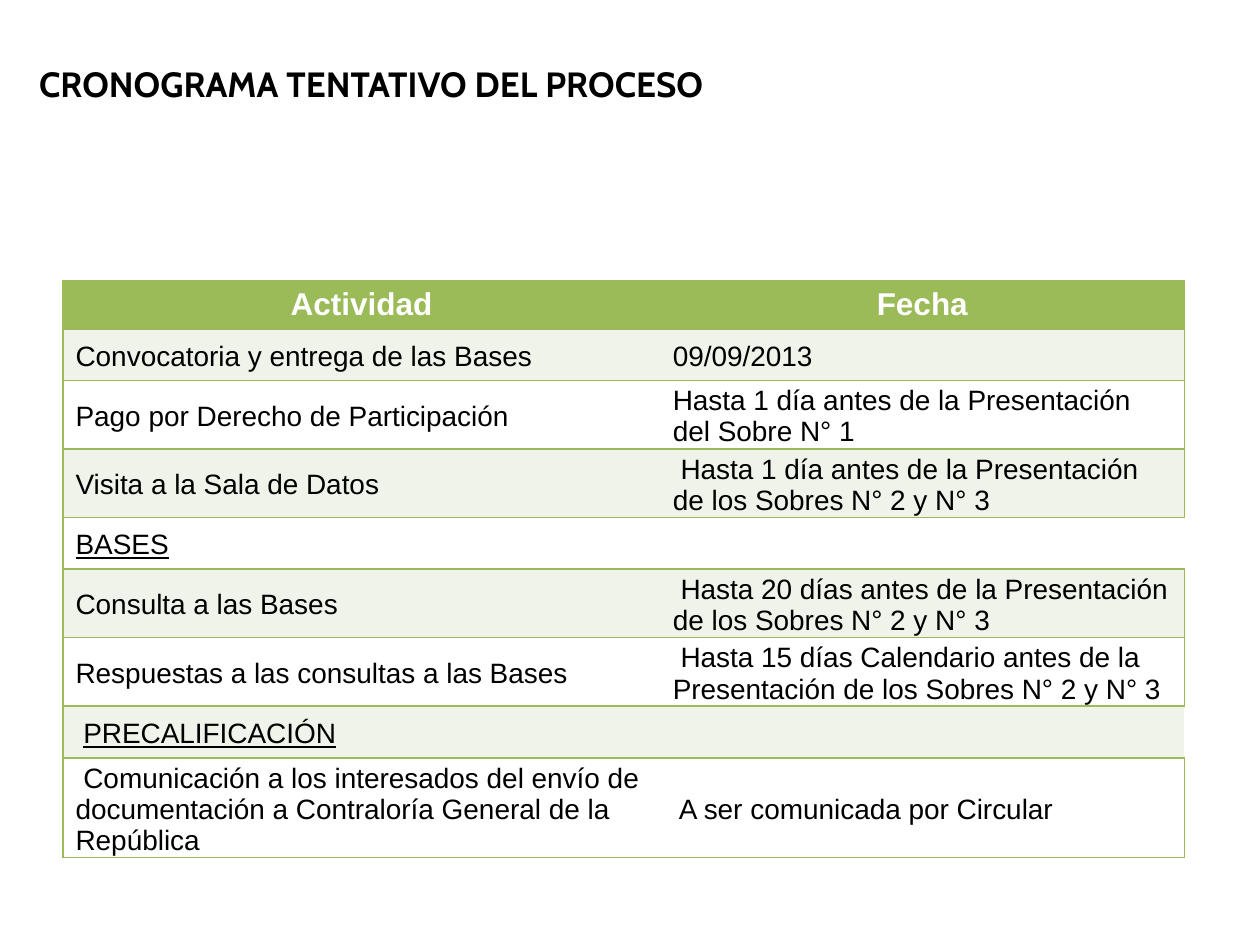
from dataclasses import dataclass

from lxml.etree import SubElement
from pptx import Presentation
from pptx.dml.color import RGBColor
from pptx.enum.text import MSO_ANCHOR, PP_ALIGN
from pptx.oxml.ns import qn
from pptx.table import Table, _Cell
from pptx.text.text import TextFrame
from pptx.util import Inches, Pt

GREEN, PALE, WHITE, BLACK = "9BBB59", "EFF3EA", "FFFFFF", "000000"
COLUMN_WIDTHS = (4.74, 4.16)
HEADER_HEIGHT, ROW_HEIGHT = 0.31, 0.41
CELL_MARGINS = {"margin_left": 0.1, "margin_right": 0.1, "margin_top": 0.04, "margin_bottom": 0.01}

TITLE_FONT = {"name": "Cabin", "size": Pt(20), "bold": True}
HEADER_FONT = {"name": "Arial", "size": Pt(18), "bold": True}
BODY_FONT = {"name": "Arial", "size": Pt(16), "bold": False}
SECTION_FONT = BODY_FONT | {"underline": True}


@dataclass(frozen=True)
class Step:
    """One row of the schedule; without a date it is a section heading."""
    activity: str
    date: str = ""


# Non-breaking spaces indent some entries and join numbers to words.
STEPS = (
    Step("Convocatoria y entrega de las Bases", "09/09/2013"),
    Step("Pago por Derecho de Participación",
         "Hasta 1 día antes de la Presentación del Sobre N° 1"),
    Step("Visita a la Sala de Datos",
         " Hasta 1 día antes de la Presentación de los Sobres N° 2 y N° 3"),
    Step("BASES"),
    Step("Consulta a las Bases",
         " Hasta 20 días antes de la Presentación de los Sobres N° 2 y N° 3"),
    Step("Respuestas a las consultas a las Bases",
         " Hasta 15 días Calendario antes de la Presentación de los Sobres N° 2 y N° 3"),
    Step(" PRECALIFICACIÓN"),
    Step(" Comunicación a los interesados del envío de documentación "
         "a Contraloría General de la República",
         " A ser comunicada por Circular"),
)


def rgb(color: str) -> RGBColor:
    return RGBColor.from_string(color)


def write(frame: TextFrame, text: str, font: dict, color: str, align: PP_ALIGN) -> None:
    """Write one paragraph, leaving any leading indent out of the underline."""
    paragraph = frame.paragraphs[0]
    paragraph.alignment = align
    words = text.lstrip()
    indent = text[:len(text) - len(words)]
    parts = ((indent, font | {"underline": False}), (words, font))
    for part, values in parts:
        if part:
            run = paragraph.add_run()
            run.text = part
            for attribute, value in values.items():
                setattr(run.font, attribute, value)
            run.font.color.rgb = rgb(color)


def draw_borders(cell: _Cell, open_edge: str) -> None:
    """Line every edge but the open one; lines must come before the fill."""
    properties = cell._tc.get_or_add_tcPr()
    for index, edge in enumerate("LRTB"):
        line = SubElement(properties, qn(f"a:ln{edge}"), w=str(Pt(1)))
        properties.insert(index, line)
        if edge == open_edge:
            SubElement(line, qn("a:noFill"))
        else:
            SubElement(SubElement(line, qn("a:solidFill")), qn("a:srgbClr"), val=GREEN)


def fill_row(table: Table, row: int, step: Step, fill: str, font: dict,
             color: str, align: PP_ALIGN) -> None:
    cells = table.cell(row, 0), table.cell(row, 1)
    for cell, text, open_edge in zip(cells, (step.activity, step.date), "RL"):
        cell.fill.solid()
        cell.fill.fore_color.rgb = rgb(fill)
        cell.vertical_anchor = MSO_ANCHOR.MIDDLE
        draw_borders(cell, open_edge)
        write(cell.text_frame, text, font, color, align)
        if row:
            for margin, inches in CELL_MARGINS.items():
                setattr(cell, margin, Inches(inches))
    if not step.date:
        cells[0].merge(cells[1])


def main() -> None:
    deck = Presentation()
    deck.slide_width, deck.slide_height = Inches(10), Inches(7.5)
    slide = deck.slides.add_slide(deck.slide_layouts[5])

    title = slide.shapes.title
    title_box = {"left": 0.21, "top": 0.04, "width": 7.48, "height": 1.25}
    for attribute, inches in title_box.items():
        setattr(title, attribute, Inches(inches))
    title.text_frame.vertical_anchor = MSO_ANCHOR.MIDDLE
    write(title.text_frame, "CRONOGRAMA TENTATIVO DEL PROCESO", TITLE_FONT, BLACK, PP_ALIGN.LEFT)

    schedule = slide.shapes.add_table(len(STEPS) + 1, len(COLUMN_WIDTHS), Inches(0.5),
                                      Inches(2.23), Inches(sum(COLUMN_WIDTHS)), Inches(4.81))
    table = schedule.table
    for column, width in zip(table.columns, COLUMN_WIDTHS):
        column.width = Inches(width)
    for index, row in enumerate(table.rows):
        row.height = Inches(ROW_HEIGHT if index else HEADER_HEIGHT)

    fill_row(table, 0, Step("Actividad", "Fecha"), GREEN, HEADER_FONT, WHITE, PP_ALIGN.CENTER)
    for row, step in enumerate(STEPS, start=1):
        fill_row(table, row, step, PALE if row % 2 else WHITE,
                 BODY_FONT if step.date else SECTION_FONT, BLACK, PP_ALIGN.LEFT)

    deck.save("out.pptx")


if __name__ == "__main__":
    main()
